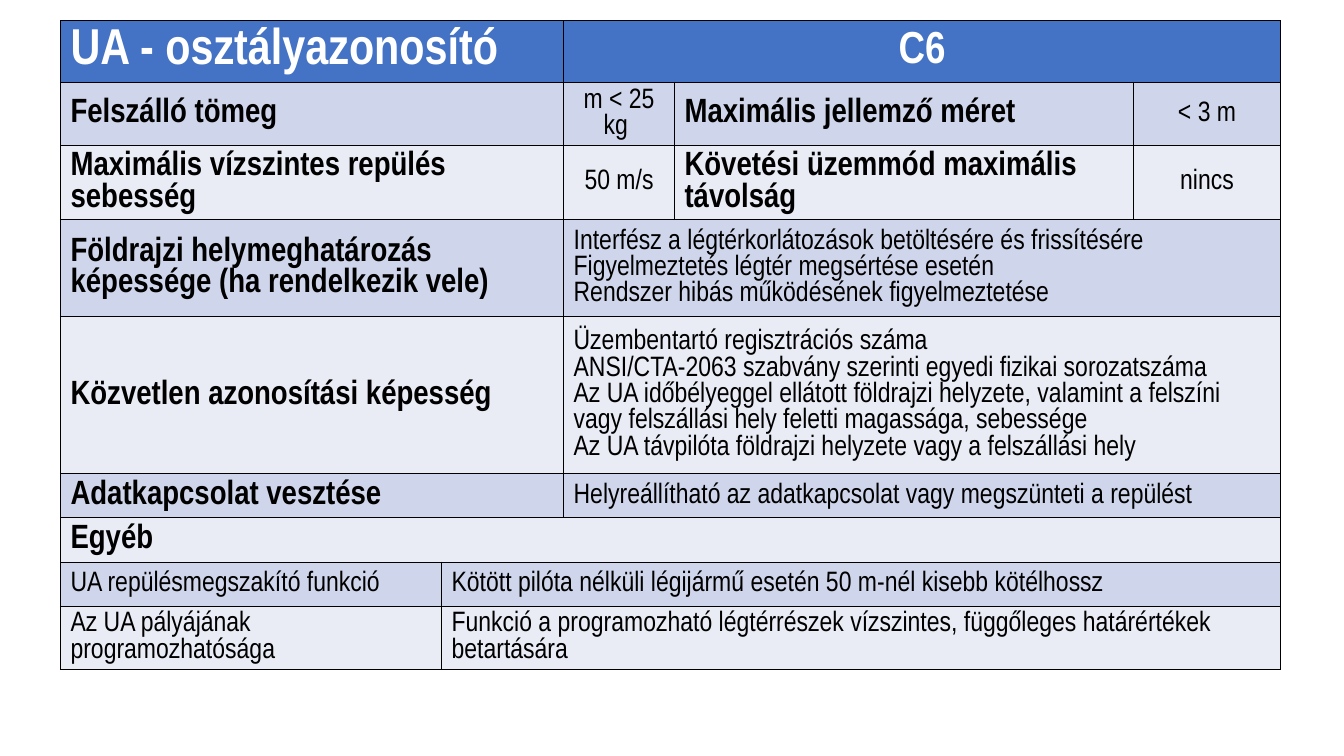
"""Build a slide with the requirements table of the C6 drone class."""
from dataclasses import dataclass

from lxml import etree
from pptx import Presentation
from pptx.dml.color import RGBColor
from pptx.enum import text
from pptx.oxml.ns import qn
from pptx.util import Pt

SLIDE_SIZE = (960, 540)
TABLE_LEFT, TABLE_TOP = 43.2, 14.7
COLUMN_WIDTHS = (272.2, 87.2, 79.2, 328, 104.9)

ROWS = [
    (44.2, [(2, "title", ["UA - osztályazonosító"]), (3, "class", ["C6"])]),
    (45, [(2, "label", ["Felszálló tömeg"]), (1, "value", ["m < 25 kg "]),
          (1, "label", ["Maximális jellemző méret"]), (1, "value", ["< 3 m"])]),
    (53, [(2, "label", ["Maximális vízszintes repülés sebesség"]),
          (1, "value", ["50 m/s"]),
          (1, "label", ["Követési üzemmód maximális távolság"]),
          (1, "value", ["nincs"])]),
    (69.5, [(2, "label", ["Földrajzi helymeghatározás képessége (ha rendelkezik vele)"]),
            (3, "detail", [
                "Interfész a légtérkorlátozások betöltésére és frissítésére",
                "Figyelmeztetés légtér megsértése esetén",
                "Rendszer hibás működésének figyelmeztetése"])]),
    (112, [(2, "label", ["Közvetlen azonosítási képesség"]),
           (3, "detail", [
               "Üzembentartó regisztrációs száma",
               "ANSI/CTA-2063 szabvány szerinti egyedi fizikai sorozatszáma",
               "Az UA időbélyeggel ellátott földrajzi helyzete, valamint a felszíni "
               "vagy felszállási hely feletti magassága, sebessége",
               "Az UA távpilóta földrajzi helyzete vagy a felszállási hely"])]),
    (31.6, [(2, "label", ["Adatkapcsolat vesztése"]),
            (3, "detail", ["Helyreállítható az adatkapcsolat vagy megszünteti a repülést"])]),
    (31.6, [(5, "label", ["Egyéb"])]),
    (31.6, [(1, "detail", ["UA repülésmegszakító funkció"]),
            (4, "detail", ["Kötött pilóta nélküli légijármű esetén 50 m-nél kisebb kötélhossz"])]),
    (45, [(1, "detail", ["Az UA pályájának programozhatósága"]),
          (4, "detail", ["Funkció a programozható légtérrészek vízszintes, függőleges "
                         "határértékek betartására"])]),
]


@dataclass(frozen=True)
class Theme:
    font: str = "Arial Narrow"
    header: str = "4472C4"
    bands: tuple = ("E9EBF5", "CFD5EA")
    light: str = "FFFFFF"
    dark: str = "000000"
    border_width: float = 1
    title: tuple = (36, True, text.PP_ALIGN.LEFT)
    class_name: tuple = (32, True, text.PP_ALIGN.CENTER)
    label: tuple = (24, True, text.PP_ALIGN.LEFT)
    value: tuple = (20, False, text.PP_ALIGN.CENTER)
    detail: tuple = (20, False, text.PP_ALIGN.LEFT)


THEME = Theme()
STYLES = {"title": THEME.title, "class": THEME.class_name, "label": THEME.label,
          "value": THEME.value, "detail": THEME.detail}


def paint_cell(cell, color):
    cell.fill.solid()
    cell.fill.fore_color.rgb = RGBColor.from_string(color)
    properties = cell._tc.get_or_add_tcPr()
    for position, side in enumerate(("lnL", "lnR", "lnT", "lnB")):
        line = etree.Element(qn(f"a:{side}"), w=str(Pt(THEME.border_width)))
        fill = etree.SubElement(line, qn("a:solidFill"))
        etree.SubElement(fill, qn("a:srgbClr"), val=THEME.dark)
        properties.insert(position, line)


def write_cell(cell, style, paragraphs, color):
    size, bold, alignment = STYLES[style]
    cell.vertical_anchor = text.MSO_ANCHOR.MIDDLE
    frame = cell.text_frame
    for index, words in enumerate(paragraphs):
        paragraph = frame.add_paragraph() if index else frame.paragraphs[0]
        paragraph.alignment = alignment
        run = paragraph.add_run()
        run.text = words
        run.font.name = THEME.font
        run.font.size = Pt(size)
        run.font.bold = bold
        run.font.color.rgb = RGBColor.from_string(color)


def add_requirements(slide):
    table = slide.shapes.add_table(
        len(ROWS), len(COLUMN_WIDTHS), Pt(TABLE_LEFT), Pt(TABLE_TOP),
        Pt(sum(COLUMN_WIDTHS)), Pt(sum(height for height, _ in ROWS))).table
    for column, width in zip(table.columns, COLUMN_WIDTHS):
        column.width = Pt(width)
    for row, (height, cells) in enumerate(ROWS):
        table.rows[row].height = Pt(height)
        background = THEME.bands[row % 2] if row else THEME.header
        for cell in table.rows[row].cells:
            paint_cell(cell, background)
        column = 0
        for span, style, paragraphs in cells:
            cell = table.cell(row, column)
            if span > 1:
                cell.merge(table.cell(row, column + span - 1))
            write_cell(cell, style, paragraphs, THEME.dark if row else THEME.light)
            column += span


def main():
    presentation = Presentation()
    presentation.slide_width, presentation.slide_height = map(Pt, SLIDE_SIZE)
    slide = presentation.slides.add_slide(presentation.slide_layouts[6])
    add_requirements(slide)
    presentation.save("out.pptx")


if __name__ == "__main__":
    main()
